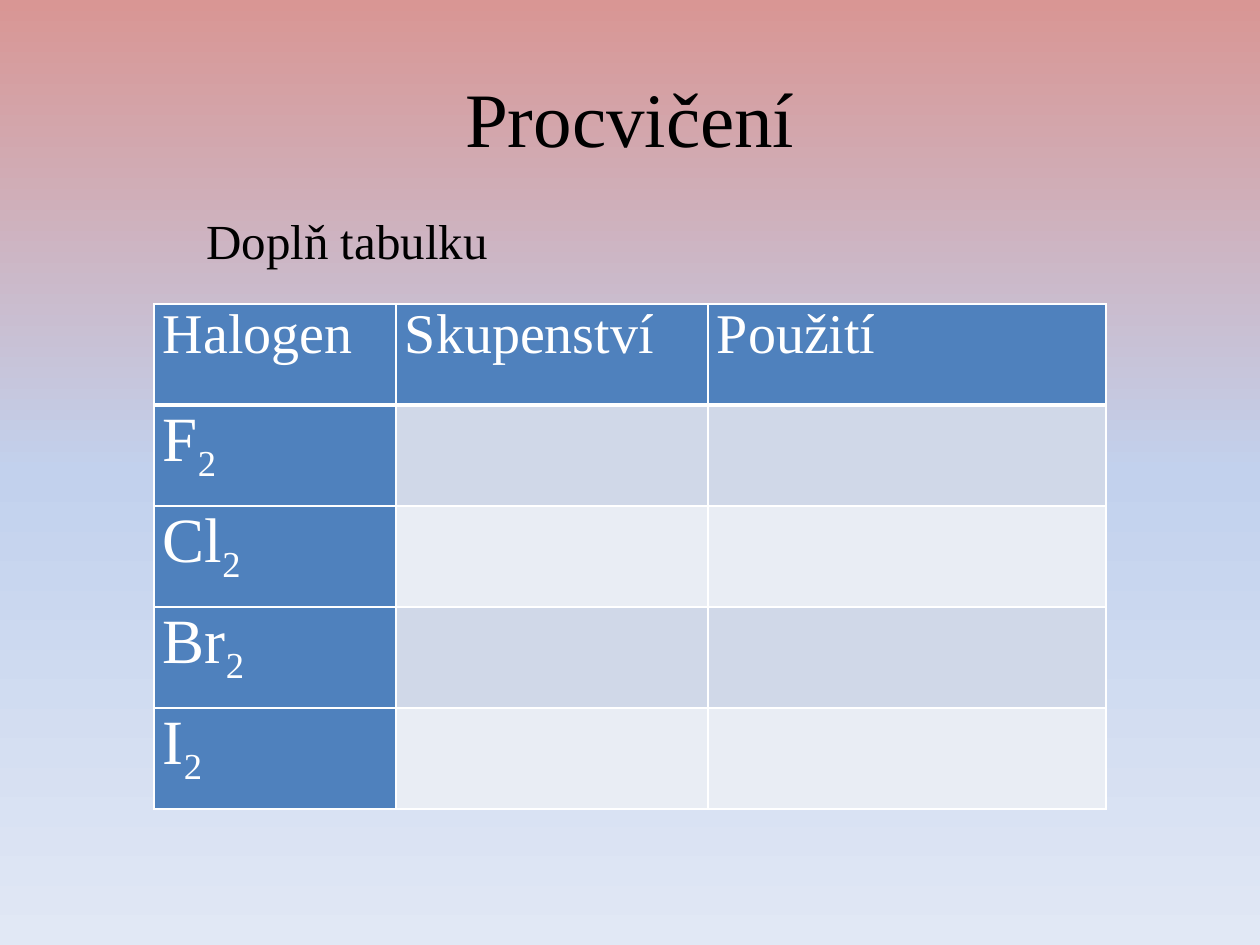
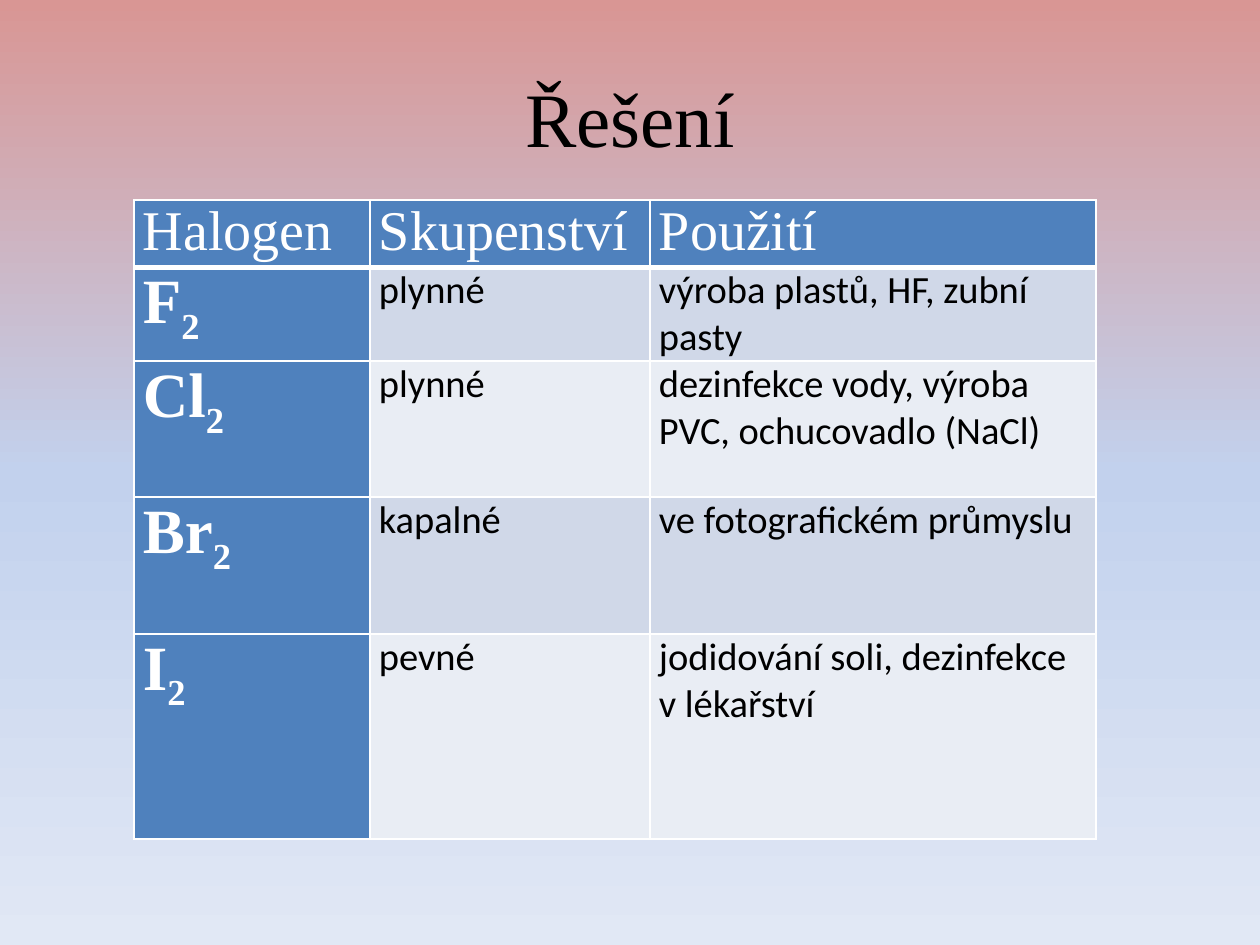
from lxml import etree
from pptx import Presentation
from pptx.dml.color import RGBColor
from pptx.enum.text import MSO_ANCHOR, PP_ALIGN
from pptx.oxml.ns import qn
from pptx.util import Pt

CENTER, MIDDLE = PP_ALIGN.CENTER, MSO_ANCHOR.MIDDLE
EMU_PER_PX = 914400 / 126
SLIDE_W, SLIDE_H = 1260, 945

SERIF, SANS = "Times New Roman", "Calibri"
BLACK, WHITE, BLUE = "000000", "FFFFFF", "4F81BD"
BANDS = ("D0D8E8", "E9EDF4")
GRADIENT = ((0, "D99694"), (50, "C2D1ED"), (100, "E1E8F5"))
TITLE_BOX = (63, 38, 1134, 157)
CELL_INSET = 9

HEADER = ("Halogen", "Skupenství", "Použití")
HALOGENS = ("F", "Cl", "Br", "I")
BLANKS = [("", "")] * len(HALOGENS)
ANSWERS = [
    ("plynné", "výroba plastů, HF, zubní pasty"),
    ("plynné", "dezinfekce vody, výroba PVC, ochucovadlo (NaCl)"),
    ("kapalné", "ve fotografickém průmyslu"),
    ("pevné", "jodidování soli, dezinfekce v lékařství"),
]
SLIDES = [
    dict(title="Procvičení", prompt=("Doplň tabulku", (194, 204, 338, 72)),
         origin=(154, 304), cols=(242, 312, 398), rows=(101,) * 5,
         answers=BLANKS, bold=False),
    dict(title="Řešení", prompt=None,
         origin=(134, 200), cols=(236, 280, 446), rows=(62, 94, 136, 137, 205),
         answers=ANSWERS, bold=True),
]


def px(n):
    return round(n * EMU_PER_PX)


def color(value):
    return RGBColor.from_string(value)


def set_font(p, size, name=SERIF, fill=BLACK, bold=False):
    p.font.size = Pt(size)
    p.font.name = name
    p.font.bold = bold
    p.font.color.rgb = color(fill)


def set_background(master):
    fill = master.background.fill
    fill.gradient()
    fill.gradient_angle = 270
    stops = master.element.find(".//" + qn("a:gsLst"))
    for stop in list(stops):
        stops.remove(stop)
    for percent, value in GRADIENT:
        stop = etree.SubElement(stops, qn("a:gs"), pos=str(percent * 1000))
        etree.SubElement(stop, qn("a:srgbClr"), val=value)


def add_text(s, text, box, size):
    tf = s.shapes.add_textbox(*map(px, box)).text_frame
    tf.word_wrap = True
    p = tf.paragraphs[0]
    p.text = text
    set_font(p, size)
    return tf


def set_borders(cell, top, bottom):
    """Draw white cell borders; top and bottom are widths in points."""
    tc_pr = cell._tc.get_or_add_tcPr()
    for side, width in (("L", 1), ("R", 1), ("T", top), ("B", bottom)):
        ln = etree.SubElement(tc_pr, qn(f"a:ln{side}"), w=str(Pt(width)))
        fill = etree.SubElement(ln, qn("a:solidFill"))
        etree.SubElement(fill, qn("a:srgbClr"), val=WHITE)


def fill_cell(cell, row, col, text, bold_halogen):
    set_borders(cell, 3 if row == 1 else 1, 3 if row == 0 else 1)
    cell.margin_left = cell.margin_right = px(CELL_INSET)
    cell.margin_top = cell.margin_bottom = 0
    cell.fill.solid()
    is_label = row == 0 or col == 0
    cell.fill.fore_color.rgb = color(BLUE if is_label else BANDS[(row - 1) % 2])
    p = cell.text_frame.paragraphs[0]
    if text:
        p.add_run().text = text
    if row == 0:
        set_font(p, 32, fill=WHITE)
    elif col == 0:
        set_font(p, 36, fill=WHITE, bold=bold_halogen)
        r = p.add_run()
        r.text = "2"
        r.font._element.set("baseline", "-25000")
    else:
        set_font(p, 22, SANS)


def add_halogen_table(s, origin, cols, rows, answers, bold):
    content = [HEADER] + [(h, *a) for h, a in zip(HALOGENS, answers)]
    box = (*origin, sum(cols), sum(rows))
    table = s.shapes.add_table(len(rows), len(cols), *map(px, box)).table
    table.first_row = table.horz_banding = False
    for column, width in zip(table.columns, cols):
        column.width = px(width)
    for i, (height, texts) in enumerate(zip(rows, content)):
        table.rows[i].height = px(height)
        for j, text in enumerate(texts):
            fill_cell(table.cell(i, j), i, j, text, bold)


def main():
    prs = Presentation()
    prs.slide_width, prs.slide_height = px(SLIDE_W), px(SLIDE_H)
    set_background(prs.slide_master)
    for d in SLIDES:
        s = prs.slides.add_slide(prs.slide_layouts[6])
        tf = add_text(s, d["title"], TITLE_BOX, 44)
        tf.vertical_anchor = MIDDLE
        tf.paragraphs[0].alignment = CENTER
        add_halogen_table(s, d["origin"], d["cols"], d["rows"], d["answers"], d["bold"])
        if d["prompt"]:
            add_text(s, *d["prompt"], 28)
    prs.save("out.pptx")


if __name__ == "__main__":
    main()
